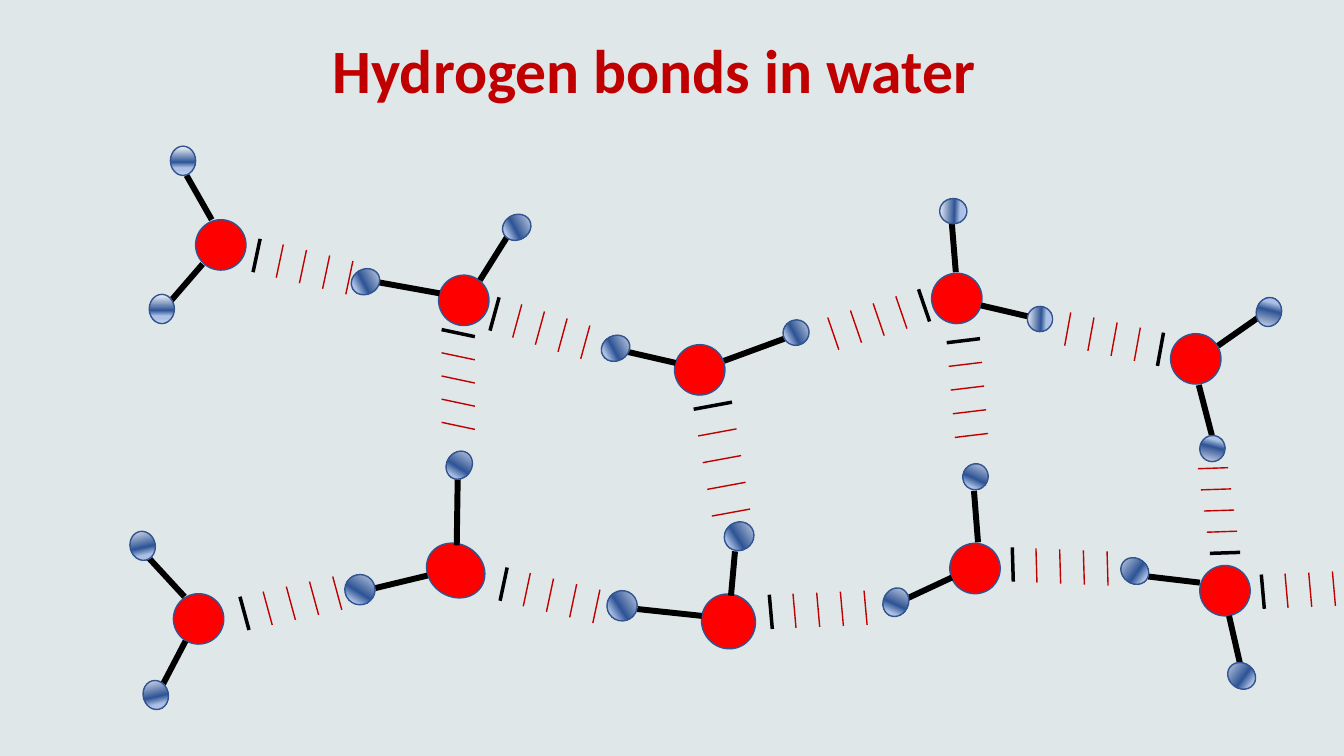
from dataclasses import dataclass

from lxml import etree
from pptx import Presentation
from pptx.dml.color import RGBColor
from pptx.enum.shapes import MSO_CONNECTOR, MSO_SHAPE
from pptx.enum.text import MSO_ANCHOR, PP_ALIGN
from pptx.oxml.ns import qn
from pptx.util import Inches, Pt

ELLIPSE = MSO_SHAPE.OVAL
STRAIGHT = MSO_CONNECTOR.STRAIGHT
CENTER = PP_ALIGN.CENTER
MIDDLE = MSO_ANCHOR.MIDDLE


@dataclass(frozen=True)
class Theme:
    font: str = "Calibri"
    title_size: float = 44
    background: str = "E0E7E8"
    accent: str = "C00000"
    oxygen: str = "FF0000"
    outline: str = "325491"
    black: str = "000000"
    outline_width: float = 1
    covalent_width: float = 4.25
    lone_pair_width: float = 2.5
    dash_width: float = 1
    hydrogen_stops: tuple = ((0, "F6F8FC"), (55, "2F5597"), (74, "ABC0E4"),
                             (83, "ABC0E4"), (100, "C7D5ED"))


class SlideBuilder:
    def __init__(self, s, theme):
        self.s = s
        self.theme = theme

    def background(self):
        fill = self.s.background.fill
        fill.solid()
        fill.fore_color.rgb = RGBColor.from_string(self.theme.background)

    def title(self, text, left, top, width, height):
        sp = self.s.shapes.title
        sp.left, sp.top = Inches(left), Inches(top)
        sp.width, sp.height = Inches(width), Inches(height)
        tf = sp.text_frame
        tf.word_wrap = True
        tf.vertical_anchor = MIDDLE
        p = tf.paragraphs[0]
        p.alignment = CENTER
        p.line_spacing = 0.9
        r = p.add_run()
        r.text = text
        r.font.name = self.theme.font
        r.font.size = Pt(self.theme.title_size)
        r.font.bold = True
        r.font.color.rgb = RGBColor.from_string(self.theme.accent)

    def line(self, group, start, end, color, width):
        x1, y1, x2, y2 = (Inches(v) for v in (*start, *end))
        sp = group.shapes.add_connector(STRAIGHT, x1, y1, x2, y2)
        sp.line.color.rgb = RGBColor.from_string(color)
        sp.line.width = Pt(width)
        etree.SubElement(sp._element.spPr, qn("a:effectLst"))

    def atom(self, group, box, rotation):
        sp = group.shapes.add_shape(ELLIPSE, *(Inches(v) for v in box))
        sp.rotation = rotation
        sp.shadow.inherit = False
        sp.line.color.rgb = RGBColor.from_string(self.theme.outline)
        sp.line.width = Pt(self.theme.outline_width)
        return sp

    def oxygen(self, group, box, rotation):
        sp = self.atom(group, box, rotation)
        sp.fill.solid()
        sp.fill.fore_color.rgb = RGBColor.from_string(self.theme.oxygen)

    def hydrogen(self, group, box, rotation):
        sp = self.atom(group, box, rotation)
        sp.fill.gradient()
        sp.fill.gradient_angle = 270
        stops = sp._element.spPr.find(qn("a:gradFill")).find(qn("a:gsLst"))
        for stop in list(stops):
            stops.remove(stop)
        for position, color in self.theme.hydrogen_stops:
            stop = etree.SubElement(stops, qn("a:gs"), pos=str(position * 1000))
            etree.SubElement(stop, qn("a:srgbClr"), val=color)

    def molecule(self, rotation, oxygen, bonds, hydrogens):
        group = self.s.shapes.add_group_shape()
        self.oxygen(group, oxygen, rotation)
        for start, end in bonds:
            self.line(group, start, end, self.theme.black, self.theme.covalent_width)
        for box in hydrogens:
            self.hydrogen(group, box, rotation)

    def hydrogen_bond(self, start, end, step, dashes=4):
        group = self.s.shapes.add_group_shape()
        self.line(group, start, end, self.theme.black, self.theme.lone_pair_width)
        for i in range(1, dashes + 1):
            first, last = ((x + i * step[0], y + i * step[1]) for x, y in (start, end))
            self.line(group, first, last, self.theme.accent, self.theme.dash_width)


MOLECULES = [
    (57.3, (6.95, 5.9, 0.55, 0.53),
     [((7.29, 5.47), (7.25, 5.91)), ((6.96, 6.11), (6.3, 6.04))],
     [(7.19, 5.17, 0.28, 0.3), (6.02, 5.86, 0.3, 0.3)]),
    (32.1, (4.22, 5.4, 0.6, 0.52),
     [((4.24, 5.71), (3.7, 5.84)), ((4.53, 5.41), (4.54, 4.73))],
     [(3.42, 5.7, 0.3, 0.3), (4.43, 4.47, 0.25, 0.29)]),
    (0, (1.94, 2.18, 0.5, 0.5),
     [((1.85, 1.74), (2.1, 2.18)), ((2.01, 2.62), (1.69, 2.99))],
     [(1.69, 1.45, 0.25, 0.29), (1.48, 2.92, 0.25, 0.29)]),
    (62.1, (4.35, 2.73, 0.5, 0.5),
     [((5.03, 2.35), (4.76, 2.78)), ((4.36, 2.91), (3.75, 2.8))],
     [(5, 2.11, 0.25, 0.29), (3.5, 2.65, 0.25, 0.29)]),
    (62.1, (6.69, 3.42, 0.5, 0.5),
     [((7.78, 3.36), (7.18, 3.58)), ((6.7, 3.6), (6.22, 3.49))],
     [(7.77, 3.17, 0.25, 0.26), (5.98, 3.31, 0.25, 0.29)]),
    (272.1, (9.24, 2.71, 0.5, 0.5),
     [((9.44, 2.21), (9.48, 2.7)), ((9.73, 3.03), (10.2, 3.14))],
     [(9.33, 1.96, 0.25, 0.27), (10.19, 3.04, 0.25, 0.25)]),
    (24.6, (9.42, 5.39, 0.5, 0.5),
     [((9.66, 4.87), (9.7, 5.38)), ((9.44, 5.73), (8.99, 5.94))],
     [(9.55, 4.6, 0.25, 0.26), (8.76, 5.83, 0.25, 0.29)]),
    (306.4, (11.9, 5.61, 0.5, 0.5),
     [((11.39, 5.72), (11.9, 5.78)), ((12.19, 6.11), (12.3, 6.59))],
     [(11.13, 5.52, 0.25, 0.29), (12.19, 6.56, 0.25, 0.29)]),
    (194.3, (11.61, 3.31, 0.5, 0.5),
     [((12.02, 4.32), (11.89, 3.82)), ((12.08, 3.43), (12.48, 3.15))],
     [(11.9, 4.32, 0.25, 0.26), (12.46, 2.95, 0.25, 0.29)]),
    (347, (1.72, 5.89, 0.5, 0.5),
     [((1.48, 5.54), (1.83, 5.92)), ((1.84, 6.36), (1.61, 6.8))],
     [(1.29, 5.27, 0.25, 0.29), (1.42, 6.75, 0.25, 0.29)]),
]

HYDROGEN_BONDS = [
    ((5.03, 5.63), (4.96, 5.96), (0.23, 0.055)),
    ((4.95, 2.95), (4.86, 3.28), (0.225, 0.07)),
    ((4.71, 3.34), (4.38, 3.27), (0, 0.23)),
    ((2.58, 2.37), (2.51, 2.7), (0.23, 0.055)),
    ((7.26, 3.99), (6.88, 4.06), (0.045, 0.265)),
    ((9.72, 3.36), (9.39, 3.4), (0.02, 0.235)),
    ((7.63, 5.9), (7.66, 6.24), (0.235, -0.01)),
    ((11.48, 3.63), (11.54, 3.3), (-0.23, -0.05)),
    ((10.04, 5.43), (10.05, 5.77), (0.235, 0.01)),
    ((12, 5.49), (12.3, 5.48), (-0.03, -0.21)),
    ((12.51, 5.7), (12.54, 6.04), (0.235, -0.01), 3),
    ((9.22, 3.19), (9.11, 2.87), (-0.225, 0.07)),
    ((2.38, 5.92), (2.47, 6.25), (0.23, -0.05)),
]


def main():
    prs = Presentation()
    prs.slide_width, prs.slide_height = Inches(13.33), Inches(7.5)
    s = prs.slides.add_slide(prs.slide_layouts[5])
    builder = SlideBuilder(s, Theme())
    builder.background()
    builder.title("Hydrogen bonds in water", 0.25, 0, 12.48, 1.45)
    for bond in HYDROGEN_BONDS:
        builder.hydrogen_bond(*bond)
    for molecule in MOLECULES:
        builder.molecule(*molecule)
    prs.save("out.pptx")


if __name__ == "__main__":
    main()
